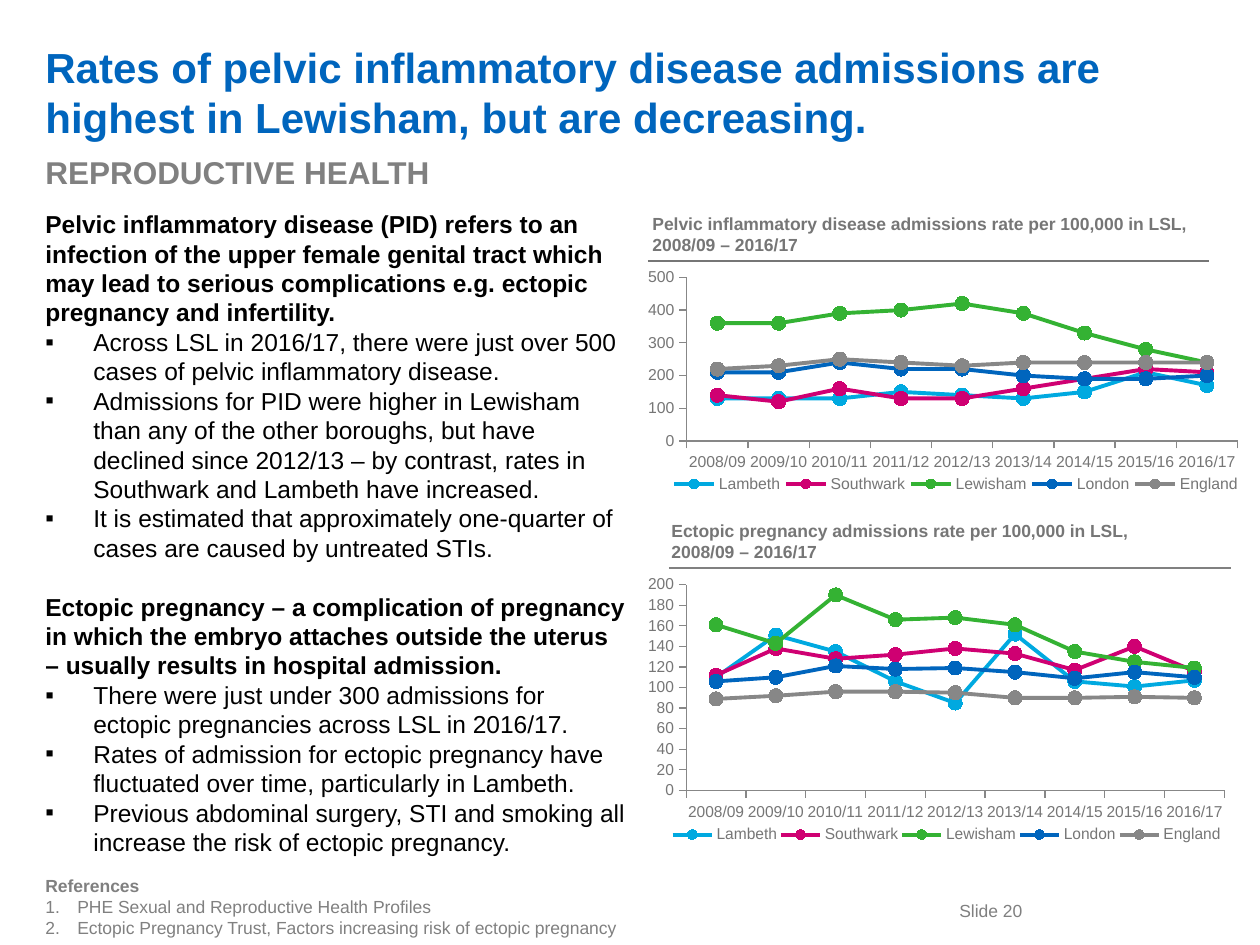
from dataclasses import dataclass
from typing import Any

from lxml import etree
from pptx import Presentation
from pptx.chart.data import CategoryChartData
from pptx.dml.color import RGBColor
from pptx.enum.chart import XL_CHART_TYPE, XL_LEGEND_POSITION, XL_MARKER_STYLE, XL_TICK_MARK
from pptx.enum.shapes import MSO_CONNECTOR
from pptx.enum.text import MSO_ANCHOR
from pptx.oxml.ns import qn
from pptx.util import Emu, Pt

LINE_MARKERS = XL_CHART_TYPE.LINE_MARKERS
BOTTOM = XL_LEGEND_POSITION.BOTTOM
CIRCLE = XL_MARKER_STYLE.CIRCLE
OUTSIDE = XL_TICK_MARK.OUTSIDE
STRAIGHT = MSO_CONNECTOR.STRAIGHT
TOP, MIDDLE = MSO_ANCHOR.TOP, MSO_ANCHOR.MIDDLE

PIXELS_PER_INCH = 126
FONT = "Arial"
BLUE, GREY, CAPTION_GREY, AXIS_GREY = "0065BD", "808080", "767676", "878787"
BLACK, WHITE = "000000", "FFFFFF"
YEARS = [f"20{year:02d}/{year + 1:02d}" for year in range(8, 17)]
AREA_COLORS = {
    "Lambeth": "00A9E0",
    "Southwark": "CF0072",
    "Lewisham": "34B233",
    "London": BLUE,
    "England": AXIS_GREY,
}


@dataclass(frozen=True)
class Line:
    """A paragraph with its weight, bullet and space before in points."""
    text: str
    bold: bool = True
    bullet: str = ""
    indent: int = 0
    before: float = 0


@dataclass(frozen=True)
class TextBlock:
    """A text box of one size and colour."""
    box: tuple[int, int, int, int]
    size: int
    color: str
    lines: list[Line]
    anchor: Any = TOP


@dataclass(frozen=True)
class Rule:
    """A horizontal line under a chart caption."""
    left: int
    right: int
    top: int
    color: str


@dataclass(frozen=True)
class RateChart:
    """A line chart of admission rates, one row of values per area."""
    box: tuple[int, int, int, int]
    plot: tuple[float, float, float, float]
    legend: tuple[float, float, float, float]
    maximum: int
    step: int
    rows: list[list[int]]


def point(text: str) -> Line:
    """Return a square-bulleted body paragraph."""
    return Line(text, False, "▪", 48)


def reference(text: str) -> Line:
    """Return a numbered reference."""
    return Line(text, False, "number", 32)


TEXT_BLOCKS = [
    TextBlock((947, 894, 100, 34), 10, GREY, [Line("Slide 20", False)]),
    TextBlock((33, 26, 1176, 131), 24, BLUE, [
        Line("Rates of pelvic inflammatory disease admissions are highest in Lewisham, but are decreasing."),
    ], MIDDLE),
    TextBlock((33, 147, 607, 50), 18, GREY, [Line("REPRODUCTIVE HEALTH")]),
    TextBlock((33, 203, 607, 621), 14, BLACK, [
        Line("Pelvic inflammatory disease (PID) refers to an infection of the upper female genital tract "
             "which may lead to serious complications e.g. ectopic pregnancy and infertility."),
        point("Across LSL in 2016/17, there were just over 500 cases of pelvic inflammatory disease."),
        point("Admissions for PID were higher in Lewisham than any of the other boroughs, but have declined "
              "since 2012/13 – by contrast, rates in Southwark and Lambeth have increased."),
        point("It is estimated that approximately one-quarter of cases are caused by untreated STIs."),
        Line("Ectopic pregnancy – a complication of pregnancy in which the embryo attaches outside the "
             "uterus – usually results in hospital admission.", before=16.8),
        point("There were just under 300 admissions for ectopic pregnancies across LSL in 2016/17."),
        point("Rates of admission for ectopic pregnancy have fluctuated over time, particularly in Lambeth."),
        point("Previous abdominal surgery, STI and smoking all increase the risk of ectopic pregnancy."),
    ]),
    TextBlock((33, 869, 907, 76), 10, GREY, [
        Line("References"),
        reference("PHE Sexual and Reproductive Health Profiles"),
        reference("Ectopic Pregnancy Trust, Factors increasing risk of ectopic pregnancy"),
    ]),
    TextBlock((640, 207, 573, 55), 10, CAPTION_GREY, [
        Line("Pelvic inflammatory disease admissions rate per 100,000 in LSL, 2008/09 – 2016/17"),
    ]),
    TextBlock((659, 514, 562, 55), 10, CAPTION_GREY, [
        Line("Ectopic pregnancy admissions rate per 100,000 in LSL,"),
        Line("2008/09 – 2016/17"),
    ]),
]
RULES = [Rule(648, 1209, 261, CAPTION_GREY), Rule(669, 1231, 568, GREY)]
CHARTS = [
    RateChart((644, 268, 612, 234), (0.07, 0.04, 0.9, 0.7), (0.04, 0.88, 0.94, 0.1), 500, 100, [
        [130, 130, 130, 150, 140, 130, 150, 210, 170],
        [140, 120, 160, 130, 130, 160, 190, 220, 210],
        [360, 360, 390, 400, 420, 390, 330, 280, 240],
        [210, 210, 240, 220, 220, 200, 190, 190, 200],
        [220, 230, 250, 240, 230, 240, 240, 240, 240],
    ]),
    RateChart((648, 573, 588, 294), (0.05, 0.04, 0.93, 0.7), (0.02, 0.85, 0.96, 0.08), 200, 20, [
        [110, 151, 135, 106, 85, 152, 106, 101, 107],
        [112, 138, 128, 132, 138, 133, 117, 140, 116],
        [161, 143, 190, 166, 168, 161, 135, 125, 119],
        [106, 110, 121, 118, 119, 115, 109, 115, 110],
        [89, 92, 96, 96, 95, 90, 90, 91, 90],
    ]),
]


def px(length: int) -> Emu:
    """Convert pixels to EMU."""
    return Emu(round(length * 914400 / PIXELS_PER_INCH))


def rgb(color: str) -> RGBColor:
    """Convert a hex string to a colour."""
    return RGBColor.from_string(color)


def apply(target: Any, values: dict[str, Any]) -> None:
    """Set each named attribute on the target."""
    for name, value in values.items():
        setattr(target, name, value)


def style_font(font: Any, size: int, color: str, bold: bool = False) -> None:
    """Format a font."""
    apply(font, {"name": FONT, "size": Pt(size), "bold": bold})
    font.color.rgb = rgb(color)


def style_line(line: Any, color: str, width: float) -> None:
    """Format an outline."""
    line.color.rgb = rgb(color)
    line.width = Pt(width)


def add_bullet(paragraph: Any, line: Line) -> None:
    """Give a paragraph a hanging bullet or number."""
    properties = paragraph._p.get_or_add_pPr()
    properties.set("marL", str(px(line.indent)))
    properties.set("indent", str(-px(line.indent)))
    etree.SubElement(properties, qn("a:buFont"), typeface=FONT)
    if line.bullet == "number":
        etree.SubElement(properties, qn("a:buAutoNum"), type="arabicPeriod")
    else:
        etree.SubElement(properties, qn("a:buChar"), char=line.bullet)


def add_text(slide: Any, block: TextBlock) -> None:
    """Draw a text block."""
    frame = slide.shapes.add_textbox(*map(px, block.box)).text_frame
    apply(frame, {"word_wrap": True, "vertical_anchor": block.anchor})
    for index, line in enumerate(block.lines):
        paragraph = frame.add_paragraph() if index else frame.paragraphs[0]
        if line.before:
            paragraph.space_before = Pt(line.before)
        if line.bullet:
            add_bullet(paragraph, line)
        run = paragraph.add_run()
        run.text = line.text
        style_font(run.font, block.size, block.color, line.bold)


def add_rule(slide: Any, rule: Rule) -> None:
    """Draw a caption rule."""
    ends = map(px, (rule.left, rule.top, rule.right, rule.top))
    connector = slide.shapes.add_connector(STRAIGHT, *ends)
    style_line(connector.line, rule.color, 1.5)
    etree.SubElement(connector._element.spPr, qn("a:effectLst"))


def set_layout(parent: Any, index: int, box: tuple[float, ...], target: dict[str, str]) -> None:
    """Place a chart part by fractions of the chart."""
    for old_layout in parent.findall(qn("c:layout")):
        parent.remove(old_layout)
    layout = etree.Element(qn("c:layout"))
    parent.insert(index, layout)
    manual = etree.SubElement(layout, qn("c:manualLayout"))
    settings = {**target, "xMode": "edge", "yMode": "edge", **dict(zip("xywh", box))}
    for name, value in settings.items():
        etree.SubElement(manual, qn(f"c:{name}"), val=str(value))


def add_rate_chart(slide: Any, rates: RateChart) -> None:
    """Draw a line chart of rates."""
    data = CategoryChartData(number_format="0")
    data.categories = YEARS
    for area, values in zip(AREA_COLORS, rates.rows):
        data.add_series(area, values)
    chart = slide.shapes.add_chart(LINE_MARKERS, *map(px, rates.box), data).chart
    apply(chart, {"has_title": False, "has_legend": True})
    style_font(chart.font, 9, CAPTION_GREY)
    apply(chart.legend, {"position": BOTTOM, "include_in_layout": False})
    apply(chart.value_axis, {"minimum_scale": 0, "maximum_scale": rates.maximum, "major_unit": rates.step})
    for axis in (chart.category_axis, chart.value_axis):
        apply(axis, {"has_major_gridlines": False, "major_tick_mark": OUTSIDE})
        style_line(axis.format.line, AXIS_GREY, 0.75)
    apply(chart.value_axis.tick_labels, {"number_format": "0", "number_format_is_linked": False})
    chart.plots[0].vary_by_categories = False
    for series, color in zip(chart.plots[0].series, AREA_COLORS.values()):
        series.smooth = False
        style_line(series.format.line, color, 2.25)
        apply(series.marker, {"style": CIRCLE, "size": 8})
        series.marker.format.fill.solid()
        series.marker.format.fill.fore_color.rgb = rgb(color)
        series.marker.format.line.color.rgb = rgb(WHITE)
    chart_element = chart._chartSpace.chart
    set_layout(chart_element.plotArea, 0, rates.plot, {"layoutTarget": "inner"})
    set_layout(chart_element.find(qn("c:legend")), 1, rates.legend, {})


def main() -> None:
    """Build and save the slide."""
    presentation = Presentation()
    apply(presentation, {"slide_width": px(1260), "slide_height": px(945)})
    slide = presentation.slides.add_slide(presentation.slide_layouts[6])
    for block in TEXT_BLOCKS:
        add_text(slide, block)
    for rule in RULES:
        add_rule(slide, rule)
    for rates in CHARTS:
        add_rate_chart(slide, rates)
    presentation.save("out.pptx")


if __name__ == "__main__":
    main()
